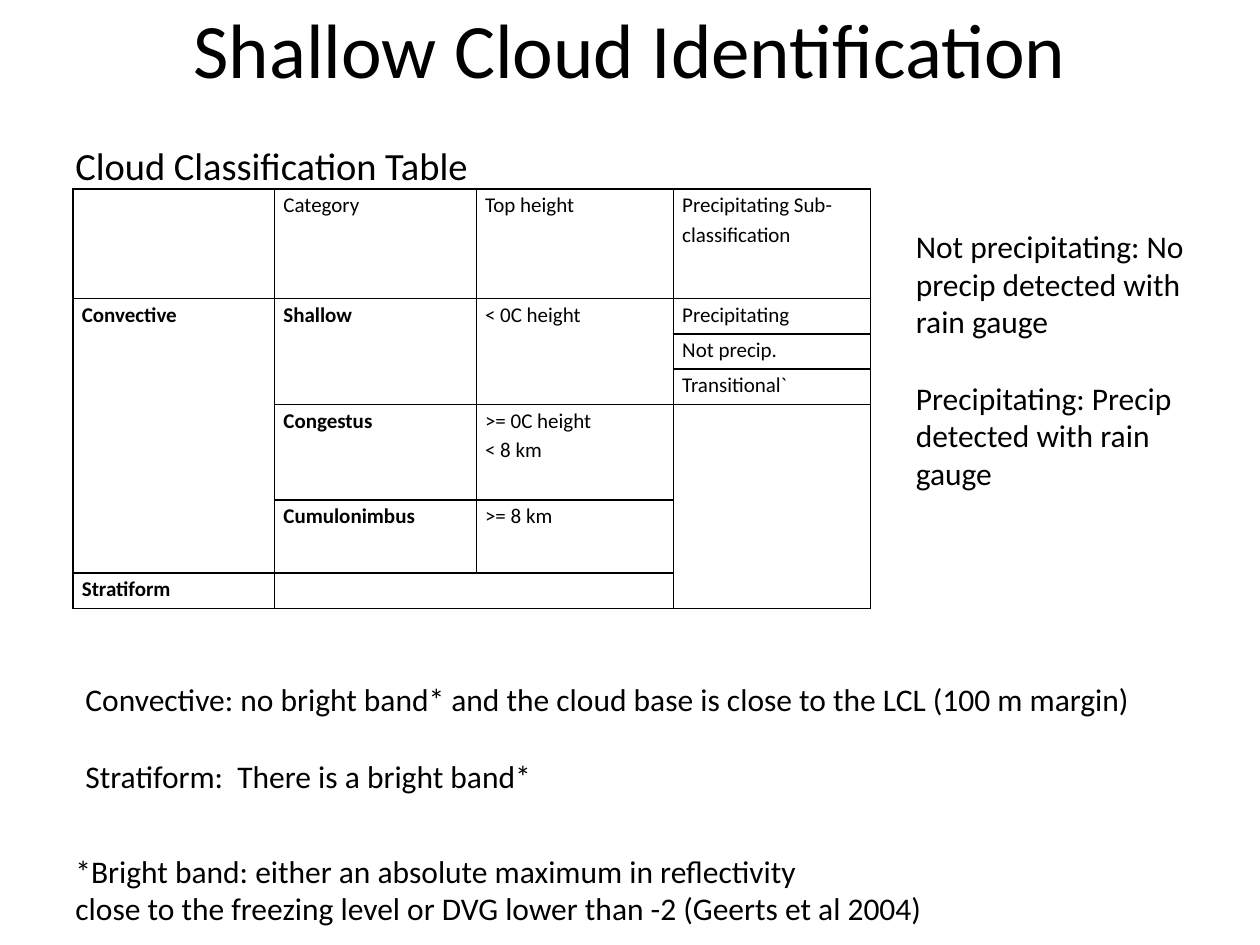
from lxml.etree import SubElement
from pptx import Presentation
from pptx.dml.color import RGBColor
from pptx.enum.text import MSO_ANCHOR, PP_ALIGN
from pptx.oxml.ns import qn
from pptx.util import Inches, Pt

COLORS = {"ink": "000000"}
FONT = "Calibri"
TITLE = "Shallow Cloud Identification"

COLUMN_WIDTHS = [1.6, 1.6, 1.565, 1.565]
ROW_HEIGHTS = [0.87, 0.28, 0.28, 0.28, 0.76, 0.58, 0.28]
CLASSIFICATION = [
    ["", "Category", "Top height", "Precipitating Sub-classification"],
    ["Convective", "Shallow", "< 0C height", "Precipitating"],
    ["", "", "", "Not precip."],
    ["", "", "", "Transitional`"],
    ["", "Congestus", ">= 0C height\n< 8 km", ""],
    ["", "Cumulonimbus", ">= 8 km", ""],
    ["Stratiform", "", "", ""],
]
MERGES = [
    ((1, 0), (5, 0)),
    ((1, 1), (3, 1)),
    ((1, 2), (3, 2)),
    ((4, 3), (6, 3)),
    ((6, 1), (6, 2)),
]

NOTES = [
    {"at": (0.5, 1.08, 4.26, 0.47), "size": 22, "gap": 0, "wrap": True,
     "lines": ["Cloud Classification Table"]},
    {"at": (7.17, 1.75, 2.58, 2.22), "size": 18, "gap": 22, "wrap": True,
     "lines": ["Not precipitating: No precip detected with rain gauge",
               "Precipitating: Precip detected with rain gauge"]},
    {"at": (0.58, 5.35, 8.6, 1.31), "size": 18, "gap": 22, "wrap": False,
     "lines": ["Convective: no bright band* and the cloud base is close to the LCL (100 m margin)",
               "Stratiform:  There is a bright band*"]},
    {"at": (0.5, 6.71, 8.52, 0.71), "size": 18, "gap": 0, "wrap": True,
     "lines": ["*Bright band: either an absolute maximum in reflectivity",
               "close to the freezing level or DVG lower than -2 (Geerts et al 2004)"]},
]


def style_runs(para, size, bold=False):
    for span in para.runs:
        span.font.name = FONT
        span.font.size = Pt(size)
        span.font.bold = bold
        span.font.color.rgb = RGBColor.from_string(COLORS["ink"])


def add_title(page):
    title = page.shapes.title
    title.left, title.top, title.width, title.height = map(Inches, (0.5, -0.25, 9, 1.25))
    title.text_frame.text = TITLE
    title.text_frame.vertical_anchor = MSO_ANCHOR.MIDDLE
    para = title.text_frame.paragraphs[0]
    para.alignment = PP_ALIGN.CENTER
    style_runs(para, 44)


def add_note(page, note):
    box = page.shapes.add_textbox(*map(Inches, note["at"]))
    frame = box.text_frame
    frame.word_wrap = note["wrap"]
    frame.text = "\n".join(note["lines"])
    for index, para in enumerate(frame.paragraphs):
        if index:
            para.space_before = Pt(note["gap"])
        style_runs(para, note["size"])


def add_borders(cell):
    properties = cell._tc.get_or_add_tcPr()
    for side in ("lnL", "lnR", "lnT", "lnB"):
        line = SubElement(properties, qn(f"a:{side}"), w=str(Pt(1)))
        fill = SubElement(line, qn("a:solidFill"))
        SubElement(fill, qn("a:srgbClr"), val=COLORS["ink"])


def format_cell(cell, text, bold):
    cell.margin_left = cell.margin_right = Inches(0.07)
    cell.margin_top = cell.margin_bottom = 0
    add_borders(cell)
    cell.fill.background()
    cell.text_frame.text = text
    for para in cell.text_frame.paragraphs:
        para.line_spacing = 1.15
        style_runs(para, 12, bold)
        if not text:
            SubElement(para._p, qn("a:endParaRPr"), sz="1200")


def add_classification(page):
    frame = page.shapes.add_table(
        len(ROW_HEIGHTS), len(COLUMN_WIDTHS), Inches(0.58), Inches(1.5),
        Inches(sum(COLUMN_WIDTHS)), Inches(sum(ROW_HEIGHTS)))
    table = frame.table
    table.first_row = table.horz_banding = False
    for column, width in zip(table.columns, COLUMN_WIDTHS):
        column.width = Inches(width)
    for row, height in zip(table.rows, ROW_HEIGHTS):
        row.height = Inches(height)
    for row, texts in enumerate(CLASSIFICATION):
        for column, text in enumerate(texts):
            format_cell(table.cell(row, column), text, row > 0 and column < 2)
    for first, last in MERGES:
        table.cell(*first).merge(table.cell(*last))


def main():
    deck = Presentation()
    deck.slide_width, deck.slide_height = Inches(10), Inches(7.5)
    page = deck.slides.add_slide(deck.slide_layouts[5])
    add_title(page)
    add_classification(page)
    for note in NOTES:
        add_note(page, note)
    deck.save("out.pptx")


if __name__ == "__main__":
    main()
